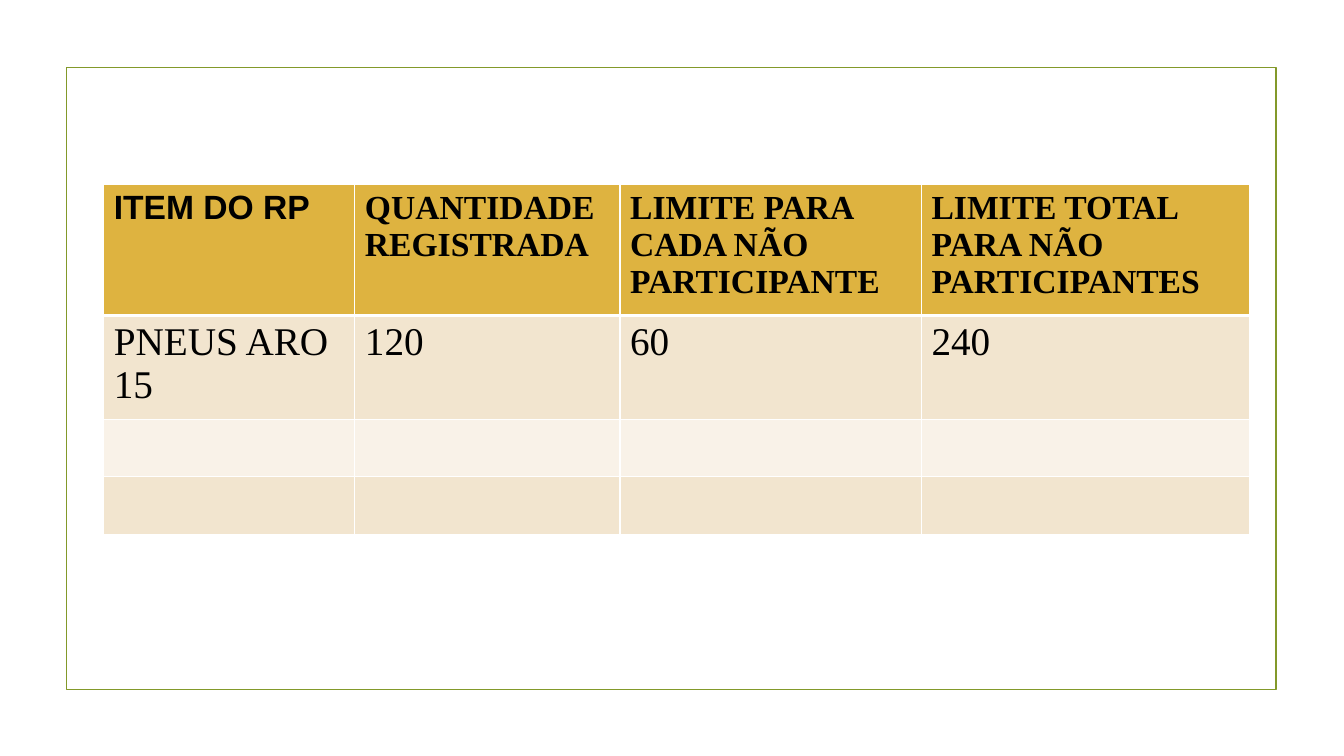
import pptx
import pptx.dml.color
import pptx.enum.shapes
import pptx.util
from lxml import etree
from pptx.oxml.ns import qn
from pptx.util import Inches

HEADERS = [
    "ITEM DO RP",
    "QUANTIDADE REGISTRADA",
    "LIMITE PARA CADA NÃO PARTICIPANTE",
    "LIMITE TOTAL PARA NÃO PARTICIPANTES",
]
ROWS = [HEADERS, ["PNEUS ARO 15", "120", "60", "240"], [""] * 4, [""] * 4]
ROW_FILLS = ["DEB340", "F2E5CF", "F9F2E8", "F2E5CF"]
COLUMN_WIDTHS = [2.49, 2.63, 2.99, 3.25]
ROW_HEIGHTS = [1.3, 1.03, 0.57, 0.57]


def color(value):
    return pptx.dml.color.RGBColor.from_string(value)


class TireLimitsSlide:
    """Draws the frame and the registered-quantity table on one slide."""

    header_format = {"name": "Times New Roman", "size": pptx.util.Pt(24), "bold": True}
    body_format = {"name": "Times New Roman", "size": pptx.util.Pt(28), "bold": False}

    def __init__(self, presentation):
        self.slide = presentation.slides.add_slide(presentation.slide_layouts[6])

    def frame(self, left, top, width, height, line_color):
        shape = self.slide.shapes.add_shape(
            pptx.enum.shapes.MSO_SHAPE.RECTANGLE,
            Inches(left), Inches(top), Inches(width), Inches(height),
        )
        shape.shadow.inherit = False
        shape.fill.background()
        shape.line.color.rgb = color(line_color)
        shape.line.width = pptx.util.Pt(1.25)

    def border(self, cell, side, points):
        properties = cell._tc.get_or_add_tcPr()
        width = str(pptx.util.Pt(points))
        line = etree.SubElement(properties, qn(f"a:{side}"), w=width)
        fill = etree.SubElement(line, qn("a:solidFill"))
        etree.SubElement(fill, qn("a:srgbClr"), val="FFFFFF")

    def cell(self, cell, text, fill_color, text_format, top, bottom):
        for side, points in {"lnL": 1, "lnR": 1, "lnT": top, "lnB": bottom}.items():
            self.border(cell, side, points)
        cell.fill.solid()
        cell.fill.fore_color.rgb = color(fill_color)
        cell.text = text
        font = cell.text_frame.paragraphs[0].font
        if text:
            font = cell.text_frame.paragraphs[0].runs[0].font
        for name, value in text_format.items():
            setattr(font, name, value)
        font.color.rgb = color("000000")

    def table(self, left, top):
        table = self.slide.shapes.add_table(
            len(ROWS), len(HEADERS), Inches(left), Inches(top),
            Inches(sum(COLUMN_WIDTHS)), Inches(sum(ROW_HEIGHTS)),
        ).table
        for column, width in zip(table.columns, COLUMN_WIDTHS):
            column.width = Inches(width)
        for row, height in zip(table.rows, ROW_HEIGHTS):
            row.height = Inches(height)
        for row_index, (texts, fill_color) in enumerate(zip(ROWS, ROW_FILLS)):
            text_format = self.body_format if row_index else self.header_format
            top_line = 3 if row_index == 1 else 1
            bottom_line = 1 if row_index else 3
            for column_index, text in enumerate(texts):
                self.cell(table.cell(row_index, column_index), text, fill_color,
                          text_format, top_line, bottom_line)
        table.cell(0, 0).text_frame.paragraphs[0].runs[0].font.name = "Arial"


def main():
    presentation = pptx.Presentation()
    presentation.slide_width = Inches(13.33)
    presentation.slide_height = Inches(7.5)
    slide = TireLimitsSlide(presentation)
    slide.frame(0.66, 0.67, 12, 6.17, "83992A")
    slide.table(1.03, 1.83)
    presentation.save("out.pptx")


if __name__ == "__main__":
    main()
